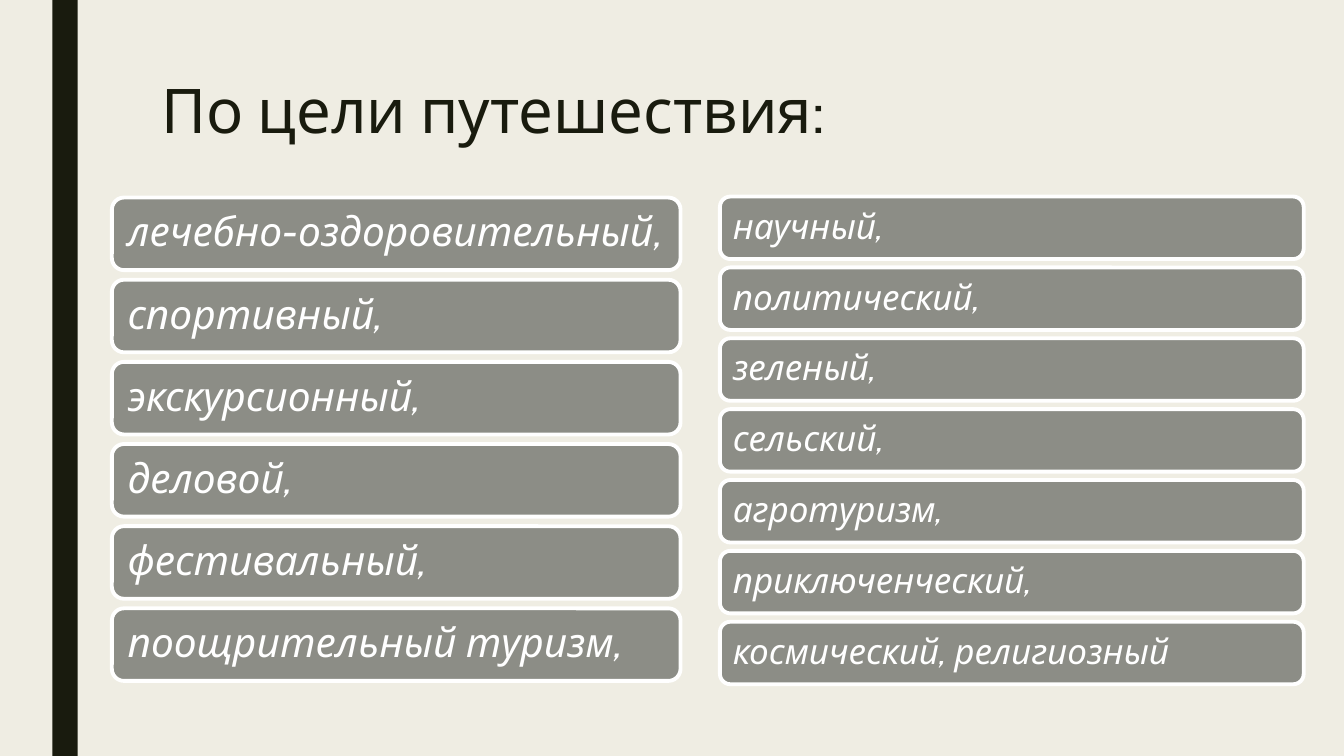
from pptx import Presentation
from pptx.dml.color import RGBColor
from pptx.enum.shapes import MSO_SHAPE as Shape
from pptx.enum.text import MSO_ANCHOR as Anchor, PP_ALIGN as Align
from pptx.util import Inches, Pt

FONT = "Cabin"
CREAM = RGBColor(0xEF, 0xED, 0xE3)
DARK = RGBColor(0x19, 0x1B, 0x0E)
GRAY = RGBColor(0x8C, 0x8D, 0x86)
WHITE = RGBColor(0xFF, 0xFF, 0xFF)

LEFT_PURPOSES = [
    "лечебно-оздоровительный,",
    "спортивный,",
    "экскурсионный,",
    "деловой,",
    "фестивальный,",
    "поощрительный туризм,",
]
RIGHT_PURPOSES = [
    "научный,",
    "политический,",
    "зеленый,",
    "сельский,",
    "агротуризм,",
    "приключенческий,",
    "космический, религиозный",
]


def format_text(text_frame, size, color, anchor, italic=False):
    text_frame.word_wrap = True
    text_frame.vertical_anchor = anchor
    paragraph = text_frame.paragraphs[0]
    paragraph.alignment = Align.LEFT
    paragraph.line_spacing = 0.9
    font = paragraph.runs[0].font
    font.name = FONT
    font.size = Pt(size)
    font.italic = italic
    font.color.rgb = color


def add_box(slide, kind, left, top, width, height, fill):
    shape = slide.shapes.add_shape(
        kind, Inches(left), Inches(top), Inches(width), Inches(height))
    shape.shadow.inherit = False
    shape.fill.solid()
    shape.fill.fore_color.rgb = fill
    shape.line.fill.background()
    return shape


def set_title(slide, text):
    title = slide.shapes.title
    title.left, title.top = Inches(1.5), Inches(0.75)
    title.width, title.height = Inches(10.5), Inches(1.62)
    title.text_frame.text = text
    format_text(title.text_frame, 44, DARK, Anchor.TOP)


def add_purpose_column(slide, purposes, left, top, width, height, pitch, size, inset):
    for row, purpose in enumerate(purposes):
        shape = add_box(slide, Shape.ROUNDED_RECTANGLE,
                        left, top + row * pitch, width, height, GRAY)
        shape.line.color.rgb = WHITE
        shape.line.width = Pt(2.75)
        text_frame = shape.text_frame
        text_frame.text = purpose
        text_frame.margin_left = text_frame.margin_top = Inches(inset)
        text_frame.margin_bottom = Inches(inset)
        text_frame.margin_right = Inches(0.05)
        format_text(text_frame, size, WHITE, Anchor.MIDDLE, italic=True)


def main():
    presentation = Presentation()
    presentation.slide_width = Inches(13.33)
    presentation.slide_height = Inches(7.5)
    slide = presentation.slides.add_slide(presentation.slide_layouts[5])

    # Background and side bar
    slide.background.fill.solid()
    slide.background.fill.fore_color.rgb = CREAM
    add_box(slide, Shape.RECTANGLE, 0.52, 0, 0.25, 7.5, DARK)

    # Title and the two columns of travel purposes
    set_title(slide, "По цели путешествия:")
    add_purpose_column(slide, LEFT_PURPOSES, left=1.11, top=1.96, width=5.64,
                       height=0.72, pitch=0.815, size=29, inset=0.12)
    add_purpose_column(slide, RIGHT_PURPOSES, left=7.14, top=1.95, width=5.79,
                       height=0.62, pitch=0.703, size=25, inset=0.1)

    presentation.save("out.pptx")


if __name__ == "__main__":
    main()
